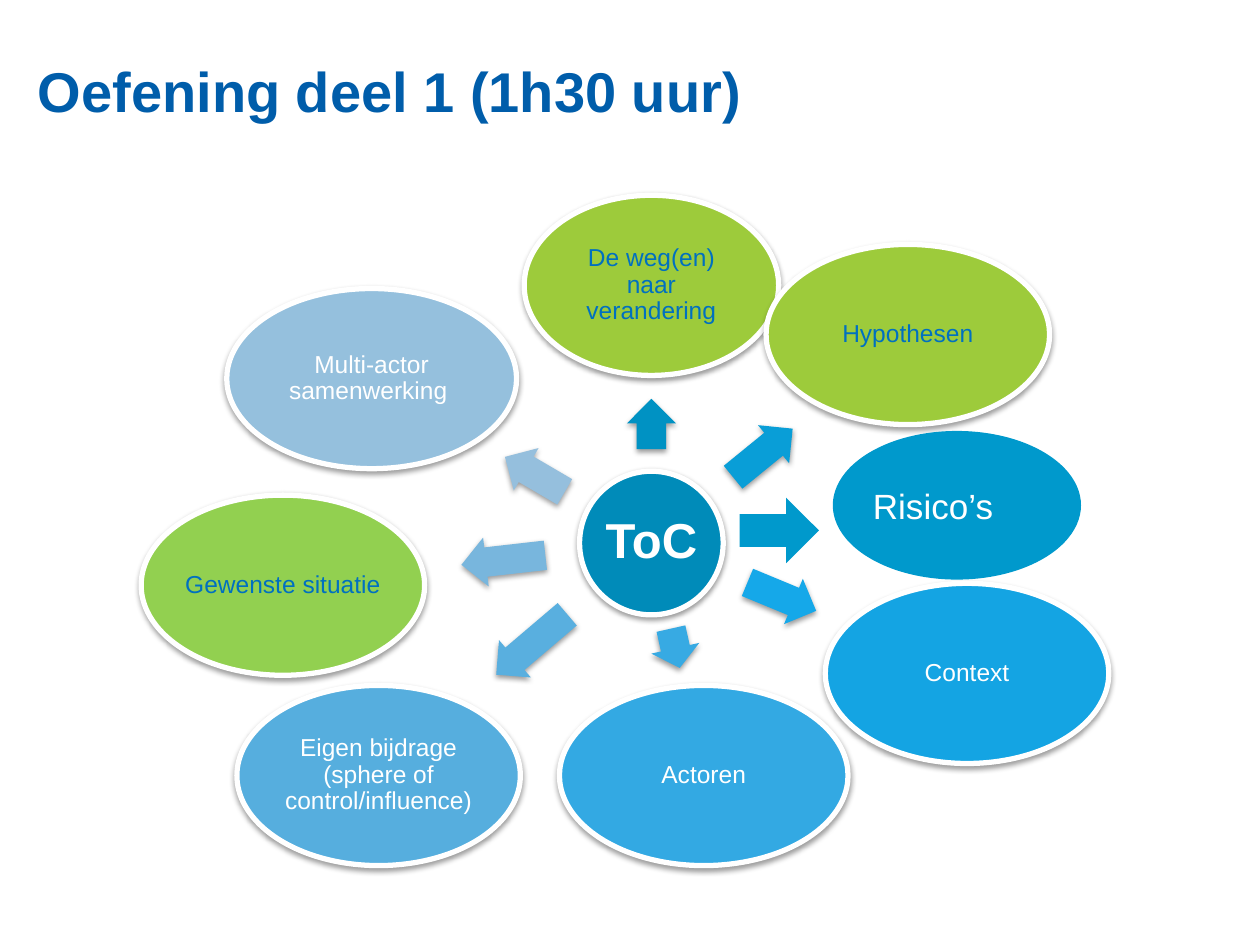
from lxml.etree import SubElement
from pptx import Presentation
from pptx.dml.color import RGBColor
from pptx.enum.shapes import MSO_SHAPE
from pptx.enum.text import MSO_ANCHOR, MSO_AUTO_SIZE, PP_ALIGN
from pptx.oxml.ns import qn
from pptx.util import Inches, Pt

WHITE = RGBColor(0xFF, 0xFF, 0xFF)
NAVY = RGBColor(0x00, 0x5D, 0xAA)
BLUE = RGBColor(0x00, 0x70, 0xC0)
TEAL = RGBColor(0x00, 0x8B, 0xB9)
CYAN = RGBColor(0x00, 0x99, 0xCC)
LIME = RGBColor(0x9D, 0xCB, 0x3B)
GREEN = RGBColor(0x92, 0xD0, 0x50)
SKY = RGBColor(0x14, 0xA4, 0xE3)
AZURE = RGBColor(0x33, 0xA9, 0xE3)
STEEL = RGBColor(0x56, 0xAE, 0xDE)
PALE = RGBColor(0x95, 0xC0, 0xDD)
UP = RGBColor(0x00, 0x92, 0xC3)
EAST = RGBColor(0x09, 0x9E, 0xD7)
SOUTH = RGBColor(0x15, 0xA8, 0xE9)
DOWN = RGBColor(0x37, 0xAA, 0xE3)
LOW = RGBColor(0x59, 0xAF, 0xDF)
WEST = RGBColor(0x78, 0xB6, 0xDD)
NORTH = RGBColor(0x95, 0xBF, 0xDD)


def write(shape, text, size=14, color=WHITE, bold=False, align=PP_ALIGN.CENTER,
          anchor=MSO_ANCHOR.MIDDLE, inset=(0.02, 0.02), wrap=True, space=0.9):
    frame = shape.text_frame
    frame.word_wrap = wrap
    frame.auto_size = MSO_AUTO_SIZE.NONE
    frame.vertical_anchor = anchor
    frame.margin_left = frame.margin_right = Inches(inset[0])
    frame.margin_top = frame.margin_bottom = Inches(inset[1])
    line = frame.paragraphs[0]
    line.alignment = align
    line.line_spacing = space
    run = line.add_run()
    run.text = text
    run.font.name = "Arial"
    run.font.size = Pt(size)
    run.font.bold = bold
    run.font.color.rgb = color


def draw(kind, box, fill, edge=False, shade=True, turn=0):
    shape = slide.shapes.add_shape(kind, *[Inches(v) for v in box])
    shape.rotation = turn
    shape.fill.solid()
    shape.fill.fore_color.rgb = fill
    if edge:
        shape.line.color.rgb = WHITE
        shape.line.width = Pt(3)
    else:
        shape.line.fill.background()
    shape.shadow.inherit = False
    if shade:
        effect = shape.element.spPr.find(qn("a:effectLst"))
        outer = SubElement(effect, qn("a:outerShdw"), blurRad=str(Pt(3.1)),
                           dist=str(Pt(1.6)), dir="5400000", rotWithShape="0")
        tone = SubElement(outer, qn("a:srgbClr"), val="000000")
        SubElement(tone, qn("a:alpha"), val="38000")
    return shape


deck = Presentation()
deck.slide_width, deck.slide_height = Inches(10), Inches(7.5)
slide = deck.slides.add_slide(deck.slide_layouts[5])

title = slide.shapes.title
title.left, title.top = Inches(0.2), Inches(0.28)
title.width, title.height = Inches(7.5), Inches(0.75)
write(title, "Oefening deel 1 (1h30 uur)", size=32, color=NAVY, bold=True,
      align=PP_ALIGN.LEFT, anchor=MSO_ANCHOR.BOTTOM, inset=(0.1, 0.05), space=1.0)

hub = draw(MSO_SHAPE.OVAL, (4.6, 3.74, 1.14, 1.14), TEAL, edge=True)
write(hub, "ToC", size=28, bold=True, inset=(0, 0.04), wrap=False)

themes = [
    ("De weg(en) naar verandering", 4.16, 1.55, 2.02, LIME, BLUE,
     (4.97, 3.17, 0.4), 270, UP),
    ("Hypothesen", 6.08, 1.94, 2.25, LIME, BLUE, (5.75, 3.4, 0.61), 320.8, EAST),
    ("Context", 6.55, 4.63, 2.25, SKY, WHITE, (5.91, 4.54, 0.59), 22.5, SOUTH),
    ("Actoren", 4.44, 5.44, 2.29, AZURE, WHITE, (5.2, 4.95, 0.32), 77.4, DOWN),
    ("Eigen bijdrage (sphere of control/influence)", 1.88, 5.44, 2.25, STEEL, WHITE,
     (3.85, 4.92, 0.74), 139.6, LOW),
    ("Gewenste situatie", 1.12, 3.93, 2.25, GREEN, BLUE, (3.66, 4.25, 0.67), 173.5, WEST),
    ("Multi-actor samenwerking ", 1.8, 2.29, 2.3, PALE, WHITE,
     (3.97, 3.57, 0.55), 210.3, NORTH),
]
for text, left, top, width, fill, ink, place, turn, tint in themes:
    arrow = draw(MSO_SHAPE.RIGHT_ARROW, (*place, 0.39), tint, turn=turn)
    arrow.adjustments[0] = 0.6
    arrow.adjustments[1] = 0.5
    oval = draw(MSO_SHAPE.OVAL, (left, top, width, 1.43), fill, edge=True)
    write(oval, text, color=ink)

draw(MSO_SHAPE.OVAL, (6.61, 3.42, 1.97, 1.18), CYAN, shade=False)
label = slide.shapes.add_textbox(Inches(6.83), Inches(3.8), Inches(1.34), Inches(0.44))
write(label, "Risico’s", size=20, align=PP_ALIGN.LEFT, anchor=MSO_ANCHOR.TOP,
      inset=(0.1, 0.05), space=1.0)
draw(MSO_SHAPE.RIGHT_ARROW, (5.87, 3.95, 0.63, 0.52), CYAN, shade=False)

deck.save("out.pptx")
